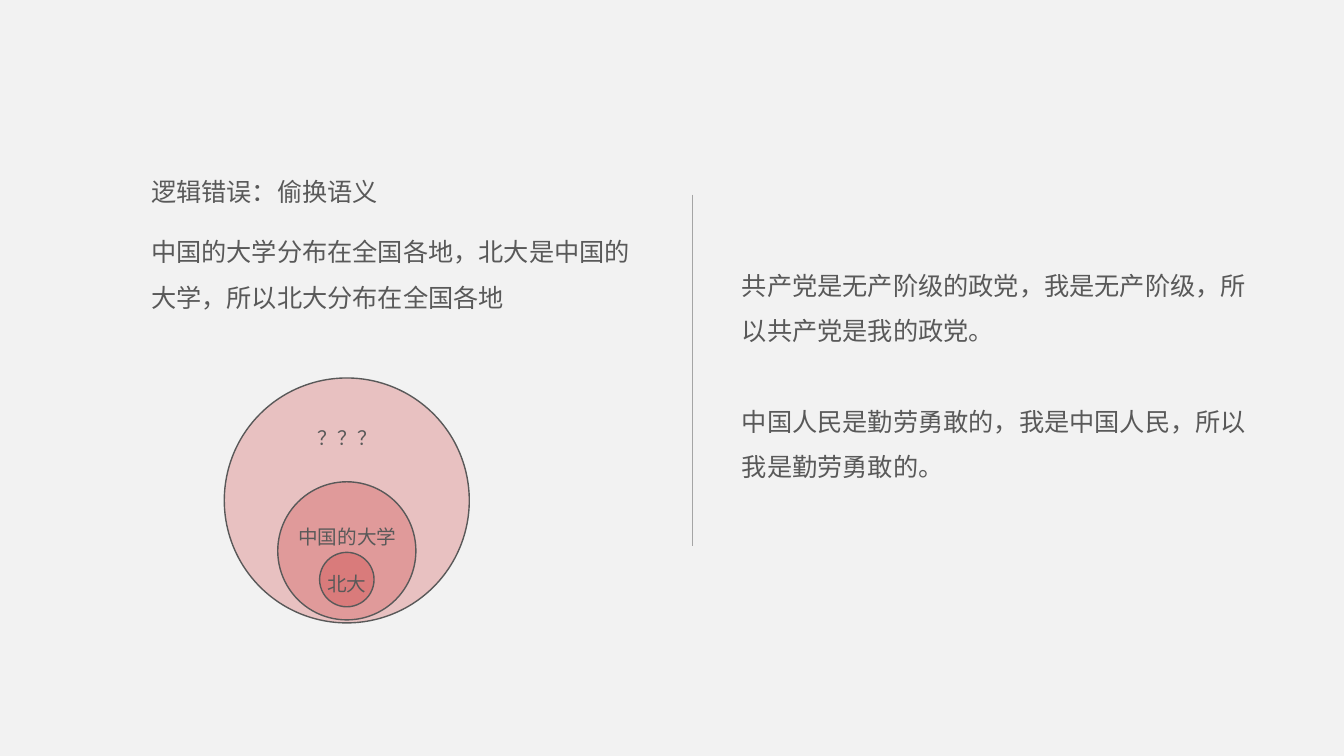
"""Build a slide on the fallacy of shifting meanings, with nested circles."""
from dataclasses import dataclass

import lxml.etree
import pptx
import pptx.dml.color
import pptx.enum.shapes
import pptx.enum.text
import pptx.oxml.ns
import pptx.util

Inches = pptx.util.Inches
Pt = pptx.util.Pt
qn = pptx.oxml.ns.qn
ALIGN = pptx.enum.text.PP_ALIGN

FONT = "Noto Sans CJK SC"
COLORS = {"background": "F2F2F2", "text": "595959", "circle": "C00000", "divider": "A5A5A5"}
CIRCLE_OPACITY = 20
CIRCLE_CENTER_X = 3.44
PARAGRAPH_GAP = 32.5


@dataclass(frozen=True)
class TextBlock:
    left: float
    top: float
    width: float
    height: float
    paragraphs: tuple[str, ...]
    size: int = 18
    align: ALIGN = ALIGN.LEFT
    wrap: bool = True


@dataclass(frozen=True)
class Circle:
    top: float
    diameter: float


CIRCLES = (Circle(3.75, 2.43), Circle(4.78, 1.37), Circle(5.48, 0.54))

BODY_TEXTS = (
    TextBlock(1.4, 1.55, 2.47, 0.5, ("逻辑错误：偷换语义",), wrap=False),
    TextBlock(1.4, 2.15, 5.08, 0.94,
              ("中国的大学分布在全国各地，北大是中国的大学，所以北大分布在全国各地",)),
    TextBlock(7.26, 2.48, 5.28, 2.3,
              ("共产党是无产阶级的政党，我是无产阶级，所以共产党是我的政党。",
               "中国人民是勤劳勇敢的，我是中国人民，所以我是勤劳勇敢的。")),
)

CIRCLE_LABELS = tuple(
    TextBlock(left, top, width, 0.41, (label,), size=14, align=ALIGN.CENTER)
    for left, top, width, label in (
        (2.49, 4.06, 1.91, "？？？"),
        (2.81, 5.04, 1.27, "中国的大学"),
        (3.01, 5.51, 0.86, "北大"),
    )
)


def rgb(name: str) -> pptx.dml.color.RGBColor:
    """Return a named colour."""
    return pptx.dml.color.RGBColor.from_string(COLORS[name])


def apply(target: object, values: dict) -> None:
    """Set each attribute of the target from the format values."""
    for name, value in values.items():
        setattr(target, name, value)


def add_text(slide: pptx.slide.Slide, block: TextBlock) -> None:
    """Add a text box with its paragraphs."""
    sp = slide.shapes.add_textbox(*map(Inches, (block.left, block.top, block.width, block.height)))
    tf = sp.text_frame
    apply(tf, {"word_wrap": block.wrap,
               "auto_size": pptx.enum.text.MSO_AUTO_SIZE.SHAPE_TO_FIT_TEXT})
    for i, text in enumerate(block.paragraphs):
        p = tf.add_paragraph() if i else tf.paragraphs[0]
        apply(p, {"alignment": block.align, "line_spacing": 1.5,
                  "space_before": Pt(PARAGRAPH_GAP if i else 0)})
        r = p.add_run()
        r.text = text
        apply(r.font, {"size": Pt(block.size), "name": FONT})
        r.font.color.rgb = rgb("text")
        lxml.etree.SubElement(r.font._element, qn("a:ea"), typeface=FONT)


def add_circle(slide: pptx.slide.Slide, circle: Circle) -> None:
    """Add a translucent circle on the shared vertical axis."""
    left = CIRCLE_CENTER_X - circle.diameter / 2
    sp = slide.shapes.add_shape(
        pptx.enum.shapes.MSO_SHAPE.OVAL,
        *map(Inches, (left, circle.top, circle.diameter, circle.diameter)))
    sp.shadow.inherit = False
    sp.fill.solid()
    sp.fill.fore_color.rgb = rgb("circle")
    color = sp._element.spPr.find(f"{qn('a:solidFill')}/{qn('a:srgbClr')}")
    lxml.etree.SubElement(color, qn("a:alpha"), val=str(CIRCLE_OPACITY * 1000))
    sp.line.color.rgb = rgb("text")
    sp.line.width = Pt(1)


def add_divider(slide: pptx.slide.Slide, x: float, top: float, bottom: float) -> None:
    """Add the vertical line between the two columns."""
    line = slide.shapes.add_connector(
        pptx.enum.shapes.MSO_CONNECTOR.STRAIGHT, *map(Inches, (x, top, x, bottom)))
    line.line.color.rgb = rgb("divider")
    line.line.width = Pt(0.5)
    lxml.etree.SubElement(line._element.spPr, qn("a:effectLst"))


def main() -> None:
    """Build and save the slide."""
    prs = pptx.Presentation()
    apply(prs, {"slide_width": Inches(13.33), "slide_height": Inches(7.5)})
    slide = prs.slides.add_slide(prs.slide_layouts[6])
    slide.background.fill.solid()
    slide.background.fill.fore_color.rgb = rgb("background")
    for circle in CIRCLES:
        add_circle(slide, circle)
    for block in BODY_TEXTS + CIRCLE_LABELS:
        add_text(slide, block)
    add_divider(slide, 6.87, 1.93, 5.42)
    prs.save("out.pptx")


if __name__ == "__main__":
    main()
